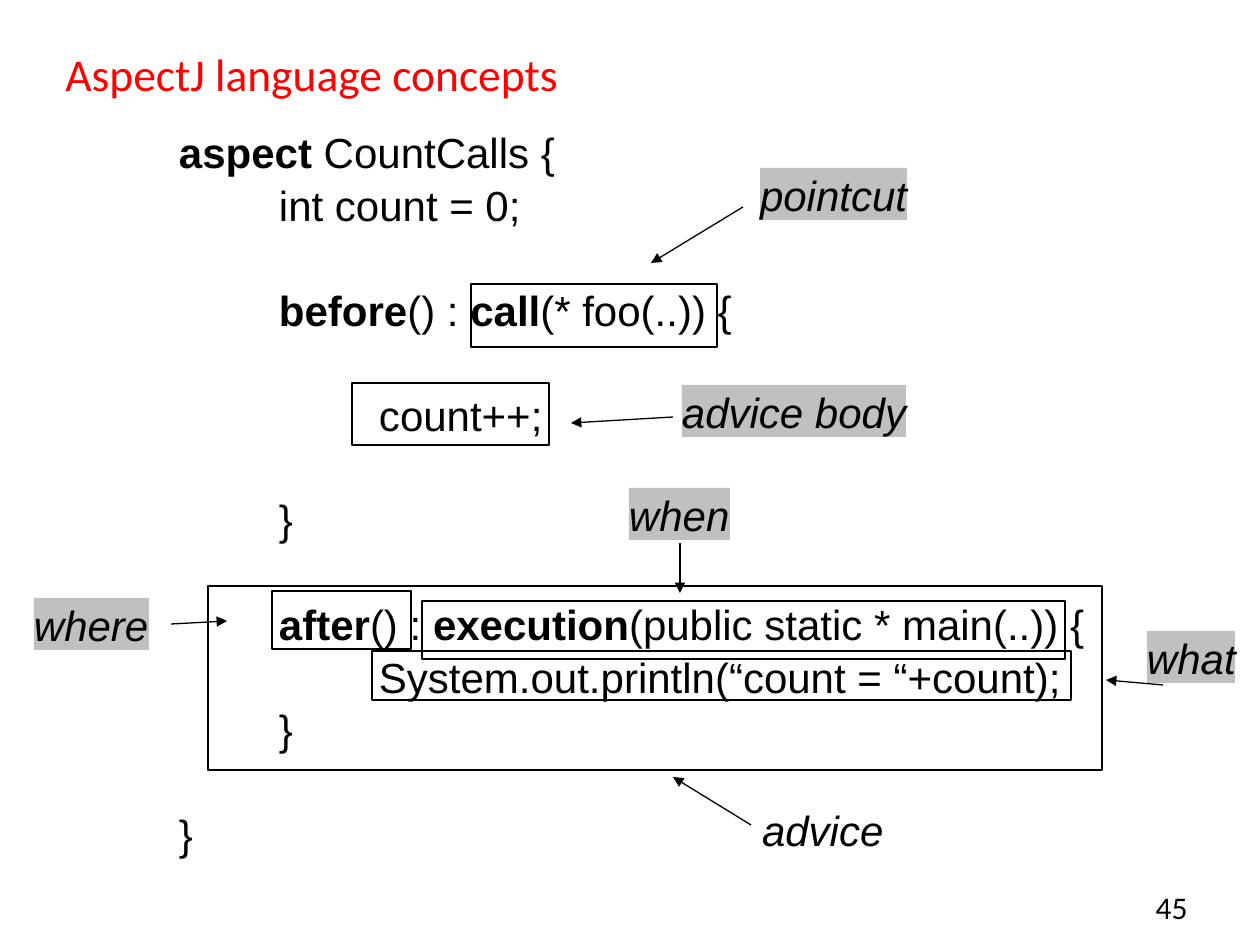
from dataclasses import dataclass

from lxml.etree import SubElement
from pptx import Presentation
from pptx.dml.color import RGBColor
from pptx.enum.shapes import MSO_CONNECTOR as Link, MSO_SHAPE as Shape
from pptx.enum.text import MSO_ANCHOR as Anchor, PP_ALIGN as Align
from pptx.oxml.ns import qn
from pptx.util import Emu, Pt

COLORS = {"ink": "000000", "title": "FF0000", "label": "C0C0C0"}
SCALE = 914400 / 126
TAB = 100
LINE_GAP = 30

CODE = [
    (0, 0, "|aspect| CountCalls {"),
    (1, 0, "int count = 0;"),
    (1, 1, "|before|() : |call|(* foo(..)) {"),
    (2, 1, "count++;"),
    (1, 1, "}"),
    (1, 1, "|after|() : |execution|(public static * main(..)) {"),
    (2, 0, "System.out.println(“count = “+count);"),
    (1, 0, "}"),
    (0, 1, "}"),
]
FRAMES = {
    "pointcut": (471, 284, 246, 63),
    "advice body": (352, 383, 197, 62),
    "advice": (208, 586, 894, 184),
    "where": (272, 591, 139, 58),
    "when": (422, 601, 643, 58),
    "what": (372, 651, 699, 49),
}
LABELS = {
    "pointcut": (760, 168, 147, 52),
    "advice body": (682, 385, 224, 52),
    "where": (34, 598, 115, 52),
    "when": (629, 488, 101, 52),
    "what": (1147, 631, 88, 52),
}
ARROWS = [
    (743, 207, 651, 263),
    (751, 825, 673, 777),
    (673, 417, 571, 423),
    (171, 624, 227, 621),
    (680, 543, 680, 593),
    (1163, 685, 1106, 680),
]


def px(value):
    """Turn pixels into EMU."""
    return Emu(round(value * SCALE))


def color(name):
    """Look up a named colour."""
    return RGBColor.from_string(COLORS[name])


def write(para, text, size=24, font="Arial", ink="ink", italic=False):
    """Add text to a paragraph, with bold parts between bars."""
    for index, part in enumerate(text.split("|")):
        if part:
            span = para.add_run()
            span.text = part
            span.font.size = Pt(size)
            span.font.name = font
            span.font.color.rgb = color(ink)
            span.font.bold = index % 2 == 1
            span.font.italic = italic


@dataclass
class Painter:
    """Draws the elements of one page in a shared style."""

    page: object
    line_width: float = 0.75
    spacing: float = 1.04

    def text(self, area, text, align=Align.LEFT, anchor=Anchor.TOP, **style):
        """Add a wrapped text box."""
        frame = self.page.shapes.add_textbox(*map(px, area)).text_frame
        frame.word_wrap = True
        frame.vertical_anchor = anchor
        frame.paragraphs[0].alignment = align
        write(frame.paragraphs[0], text, **style)

    def bare_frame(self, box, wrap=False):
        """Strip the insets from a box and set its wrapping."""
        frame = box.text_frame
        frame.margin_left = frame.margin_right = 0
        frame.margin_top = frame.margin_bottom = 0
        frame.word_wrap = wrap
        frame.vertical_anchor = Anchor.TOP
        return frame

    def code(self, area, lines):
        """Add a code listing with indents and line gaps."""
        box = self.page.shapes.add_textbox(*map(px, area))
        frame = self.bare_frame(box, wrap=True)
        for index, (indent, gap, text) in enumerate(lines):
            para = frame.add_paragraph() if index else frame.paragraphs[0]
            para.line_spacing = self.spacing
            para.space_before = Pt(gap * LINE_GAP)
            para._p.get_or_add_pPr().set("marL", str(px(indent * TAB)))
            write(para, text)

    def label(self, area, text, filled=True):
        """Add an italic label, on grey if filled."""
        shapes = self.page.shapes
        if filled:
            box = shapes.add_shape(Shape.RECTANGLE, *map(px, area))
            box.shadow.inherit = False
            box.fill.solid()
            box.fill.fore_color.rgb = color("label")
            box.line.fill.background()
        else:
            box = shapes.add_textbox(*map(px, area))
        para = self.bare_frame(box).paragraphs[0]
        para.alignment = Align.LEFT
        para.line_spacing = self.spacing
        write(para, text, italic=True)

    def frame(self, area):
        """Add an outline around a piece of code."""
        box = self.page.shapes.add_shape(Shape.ROUNDED_RECTANGLE, *map(px, area))
        box.adjustments[0] = 0
        box.shadow.inherit = False
        box.fill.background()
        self.stroke(box)

    def arrow(self, ends):
        """Add a straight arrow."""
        link = self.page.shapes.add_connector(Link.STRAIGHT, *map(px, ends))
        self.stroke(link)
        SubElement(link.line._get_or_add_ln(), qn("a:tailEnd"), type="triangle")
        SubElement(link._element.spPr, qn("a:effectLst"))

    def stroke(self, item):
        """Set the common line style."""
        item.line.color.rgb = color("ink")
        item.line.width = Pt(self.line_width)


def main():
    """Build and save the deck."""
    deck = Presentation()
    deck.slide_width, deck.slide_height = px(1260), px(945)
    painter = Painter(deck.slides.add_slide(deck.slide_layouts[6]))
    painter.text((1113, 882, 87, 63), "45", align=Align.RIGHT, size=18, font="Calibri")
    painter.text((53, 42, 1144, 63), "AspectJ language concepts",
                 anchor=Anchor.MIDDLE, size=26, font="Calibri", ink="title")
    painter.code((179, 125, 925, 732), CODE)
    for area in FRAMES.values():
        painter.frame(area)
    for text, area in LABELS.items():
        painter.label(area, text)
    painter.label((762, 803, 122, 52), "advice", filled=False)
    for ends in ARROWS:
        painter.arrow(ends)
    deck.save("out.pptx")


if __name__ == "__main__":
    main()
